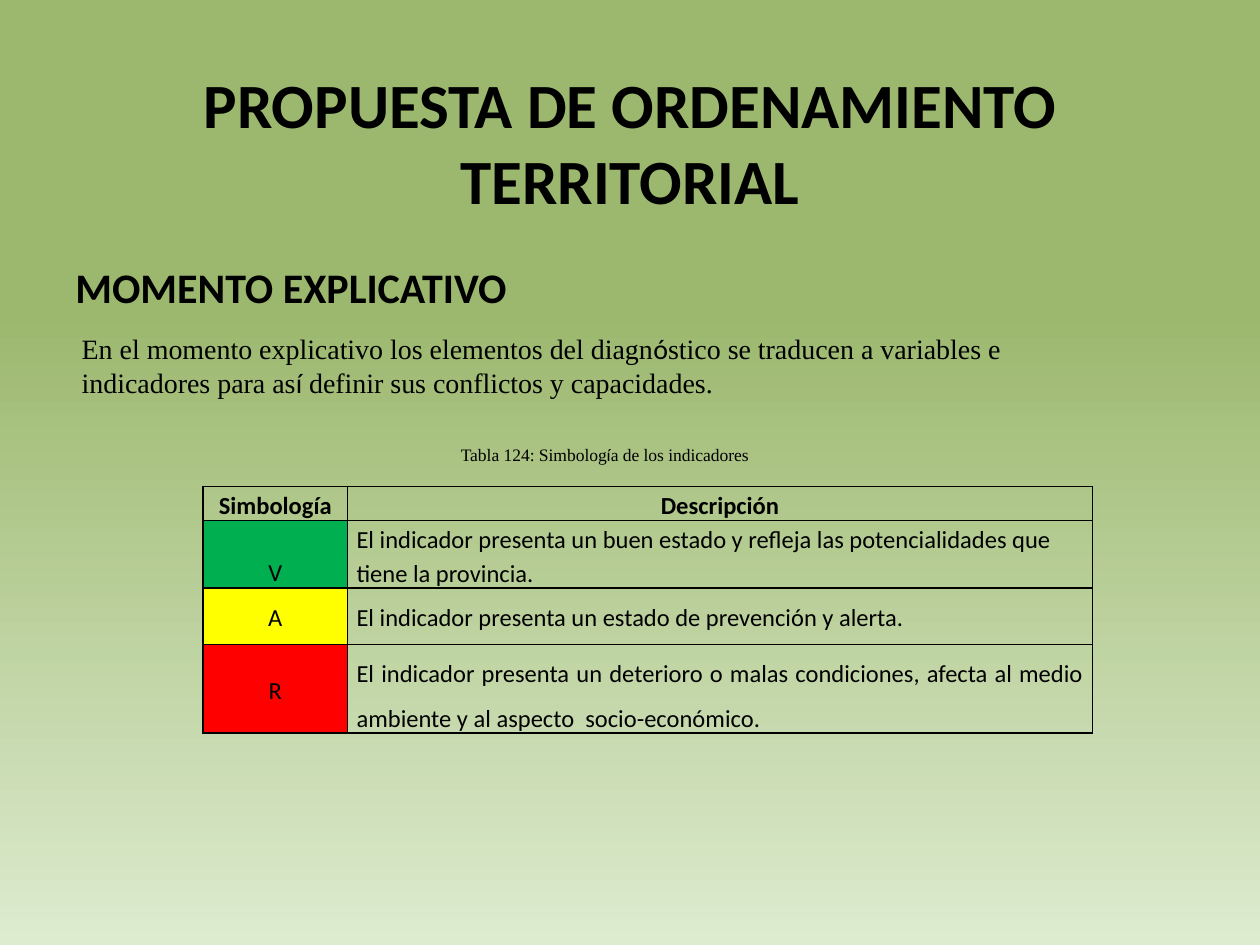
from dataclasses import dataclass
from pptx import Presentation, util as u
from pptx.dml.color import RGBColor as Rgb
from pptx.enum import text as t
from pptx.oxml import parse_xml
from pptx.oxml.ns import nsdecls


@dataclass(frozen=True)
class Theme:
    ink: str = "000000"
    top: str = "9CB86E"
    base: str = "DDEBCF"
    green: str = "00B050"
    yellow: str = "FFFF00"
    red: str = "FF0000"
    sans: str = "Calibri"
    serif: str = "Times New Roman"
    title: int = 36
    head: int = 24
    body: int = 16
    cell: int = 14
    note: int = 10


look = Theme()
left, mid, just = t.PP_ALIGN.LEFT, t.PP_ALIGN.CENTER, t.PP_ALIGN.JUSTIFY
high, center, low = t.MSO_ANCHOR.TOP, t.MSO_ANCHOR.MIDDLE, t.MSO_ANCHOR.BOTTOM


def write(frame, words, size, font=look.sans, bold=False, align=left, space=None):
    para = frame.paragraphs[0]
    para.alignment = align
    para.line_spacing = space
    for i, part in enumerate(words.split("|")):
        run = para.add_run()
        run.text = part
        run.font.name = look.sans if i % 2 else font
        run.font.size = u.Pt(size)
        run.font.bold = bold
        run.font.color.rgb = Rgb.from_string(look.ink)


def label(slide, box, words, size, anchor=center, wrap=True, inset=0.05, **form):
    frame = slide.shapes.add_textbox(*map(u.Inches, box)).text_frame
    frame.word_wrap = wrap
    frame.vertical_anchor = anchor
    frame.margin_top = u.Inches(inset)
    write(frame, words, size, **form)


def edge(cell):
    props = cell._tc.get_or_add_tcPr()
    for i, side in enumerate(("lnL", "lnR", "lnT", "lnB")):
        props.insert(i, parse_xml(
            f'<a:{side} {nsdecls("a")} w="{u.Pt(1)}"><a:solidFill>'
            f'<a:srgbClr val="{look.ink}"/></a:solidFill></a:{side}>'))


def fill_cell(cell, words, anchor, tint=None, **form):
    cell.margin_left = cell.margin_right = u.Inches(0.07)
    cell.margin_top = cell.margin_bottom = 0
    cell.vertical_anchor = anchor
    if tint:
        cell.fill.solid()
        cell.fill.fore_color.rgb = Rgb.from_string(tint)
    else:
        cell.fill.background()
    write(cell.text_frame, words, look.cell, **form)
    edge(cell)


def legend(slide, box):
    rows = [
        ("V", look.green, low, 1.15, left,
         "El indicador presenta un buen estado y refleja las potencialidades que tiene la provincia."),
        ("A", look.yellow, center, 1.15, left,
         "El indicador presenta un estado de prevención y alerta."),
        ("R", look.red, center, 1.5, just,
         "El indicador presenta un deterioro o malas condiciones, afecta al medio "
         "ambiente y al aspecto  socio-económico."),
    ]
    table = slide.shapes.add_table(len(rows) + 1, 2, *map(u.Inches, box)).table
    table.horz_banding = False
    for col, wide in zip(table.columns, (1.15, box[2] - 1.15)):
        col.width = u.Inches(wide)
    for row, tall in zip(table.rows, (0.27, 0.53, 0.45, 0.7)):
        row.height = u.Inches(tall)
    for i, head in enumerate(("Simbología", "Descripción")):
        fill_cell(table.cell(0, i), head, high, bold=True, align=mid, space=1.15)
    for i, (sign, tint, anchor, space, align, words) in enumerate(rows, 1):
        fill_cell(table.cell(i, 0), sign, anchor, tint, align=mid, space=1.15)
        fill_cell(table.cell(i, 1), words, center, align=align, space=space)


def backdrop(slide):
    fill = slide.background.fill
    fill.gradient()
    fill.gradient_angle = 270
    for stop, place, tint in zip(fill.gradient_stops, (0.33, 1), (look.top, look.base)):
        stop.position = place
        stop.color.rgb = Rgb.from_string(tint)


def main():
    deck = Presentation()
    deck.slide_width, deck.slide_height = u.Inches(10), u.Inches(7.5)
    slide = deck.slides.add_slide(deck.slide_layouts[6])
    backdrop(slide)
    label(slide, (0.5, 0.3, 9, 1.34), "PROPUESTA DE ORDENAMIENTO TERRITORIAL",
          look.title, anchor=high, inset=0.22, bold=True, align=mid)
    label(slide, (0.5, 2.03, 9, 4.67), "MOMENTO EXPLICATIVO",
          look.head, anchor=high, bold=True)
    label(slide, (0.55, 2.58, 7.81, 0.64),
          "En el momento explicativo los elementos del diagn|ó|stico se traducen a variables e "
          "indicadores para as|í| definir sus conflictos y capacidades.",
          look.body, font=look.serif)
    legend(slide, (1.61, 3.86, 7.06, 1.95))
    label(slide, (-0.2, 3.36, 10, 0.5), "Tabla 124: Simbolog|í|a de los indicadores",
          look.note, wrap=False, font=look.serif, align=mid)
    deck.save("out.pptx")


if __name__ == "__main__":
    main()
